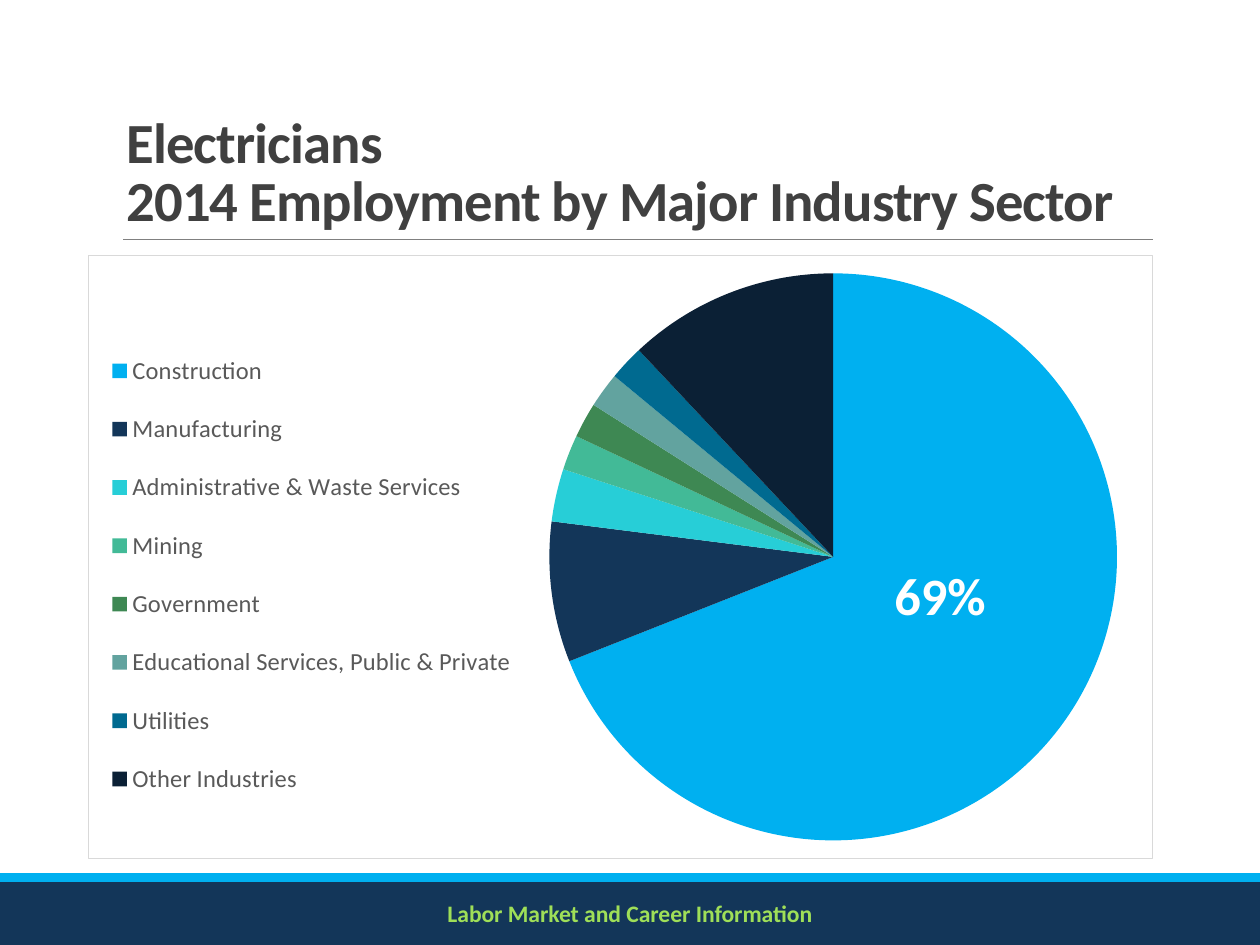
"""Build the slide on electricians' employment by major industry sector."""
from lxml.etree import SubElement
from pptx import Presentation
from pptx.chart.data import CategoryChartData
from pptx.dml.color import RGBColor
from pptx.enum.chart import XL_CHART_TYPE, XL_LEGEND_POSITION
from pptx.enum.shapes import MSO_CONNECTOR, MSO_SHAPE
from pptx.enum.text import MSO_ANCHOR, MSO_AUTO_SIZE, PP_ALIGN
from pptx.oxml import parse_xml
from pptx.oxml.ns import nsdecls, qn
from pptx.util import Pt

COLORS = {
    "navy": "133659", "sky": "00B0F0", "rule": "808080", "lime": "9FDF58",
    "title": "404040", "legend": "595959", "border": "D9D9D9",
    "white": "FFFFFF", "black": "000000",
}
SECTORS = [
    ("Construction", 69, "00B0F0"),
    ("Manufacturing", 8, "133659"),
    ("Administrative & Waste Services", 3, "27CED7"),
    ("Mining", 2, "42BA97"),
    ("Government", 2, "3E8853"),
    ("Educational Services, Public & Private", 2, "62A39F"),
    ("Utilities", 2, "006A90"),
    ("Other Industries", 12, "0B2035"),
]


def style(font, size, color, bold=False):
    """Set the typeface, size, colour and weight of a font."""
    font.name = "Calibri"
    font.size = Pt(size)
    font.bold = bold
    font.color.rgb = RGBColor.from_string(COLORS[color])


def set_layout(parent, position, x, y, w, h, inner=False):
    """Place a chart part by fractions of the chart area."""
    for old in parent.findall(qn("c:layout")):
        parent.remove(old)
    layout = parse_xml(f"<c:layout {nsdecls('c')}/>")
    manual = SubElement(layout, qn("c:manualLayout"))
    if inner:
        SubElement(manual, qn("c:layoutTarget")).set("val", "inner")
    for tag, value in [("xMode", "edge"), ("yMode", "edge"),
                       ("x", x), ("y", y), ("w", w), ("h", h)]:
        SubElement(manual, qn(f"c:{tag}")).set("val", str(value))
    parent.insert(position, layout)


prs = Presentation()
prs.slide_width, prs.slide_height = Pt(720), Pt(540)
s = prs.slides.add_slide(prs.slide_layouts[5])

for top, height, color in [(504, 36, "navy"), (499, 5, "sky")]:
    sp = s.shapes.add_shape(MSO_SHAPE.RECTANGLE, 0, Pt(top), Pt(720), Pt(height))
    sp.shadow.inherit = False
    sp.fill.solid()
    sp.fill.fore_color.rgb = RGBColor.from_string(COLORS[color])
    sp.line.fill.background()

rule = s.shapes.add_connector(MSO_CONNECTOR.STRAIGHT, Pt(70.5), Pt(137), Pt(659), Pt(137))
rule.line.width = Pt(0.5)
rule.line.color.rgb = RGBColor.from_string(COLORS["rule"])
SubElement(rule.element.spPr, qn("a:effectLst"))

title = s.shapes.title
title.left, title.top, title.width, title.height = Pt(65), Pt(22.5), Pt(594), Pt(114.5)
tf = title.text_frame
tf.word_wrap = True
tf.auto_size = MSO_AUTO_SIZE.NONE
tf.vertical_anchor = MSO_ANCHOR.BOTTOM
p = tf.paragraphs[0]
p.alignment = PP_ALIGN.LEFT
p.line_spacing = 0.85
for i, text in enumerate(["Electricians", "2014 Employment by Major Industry Sector"]):
    if i:
        p.add_line_break()
    r = p.add_run()
    r.text = text
    style(r.font, 32.4, "title", True)
    r.font._element.set("spc", "-50")

data = CategoryChartData()
data.categories = [name for name, _, _ in SECTORS]
data.add_series("Series 1", [value for _, value, _ in SECTORS])
chart = s.shapes.add_chart(
    XL_CHART_TYPE.PIE, Pt(50), Pt(145.5), Pt(609), Pt(345.5), data).chart
chart.has_title = False
style(chart.font, 10, "black")
chart.has_legend = True
legend = chart.legend
legend.position = XL_LEGEND_POSITION.LEFT
legend.include_in_layout = False
style(legend.font, 14, "legend")

plot = chart.plots[0]
plot.vary_by_categories = True
for i, (_, _, color) in enumerate(SECTORS):
    fill = plot.series[0].points[i].format.fill
    fill.solid()
    fill.fore_color.rgb = RGBColor.from_string(color)

space = chart.element
set_layout(space.find(".//" + qn("c:plotArea")), 0, 0.43, 0.03, 0.54, 0.94, True)
set_layout(space.find(".//" + qn("c:legend")), 1, 0.01, 0.12, 0.4, 0.82)
space.find(qn("c:chart")).addnext(parse_xml(
    f"<c:spPr {nsdecls('c', 'a')}>"
    f'<a:solidFill><a:srgbClr val="{COLORS["white"]}"/></a:solidFill>'
    f'<a:ln w="{Pt(0.75)}"><a:solidFill><a:srgbClr val="{COLORS["border"]}"/>'
    "</a:solidFill></a:ln></c:spPr>"))

for text, box, size, color, align in [
    ("Labor Market and Career Information", (0, 510, 720, 25), 13.5, "lime", PP_ALIGN.CENTER),
    ("69%", (504, 318, 72, 44), 30, "white", PP_ALIGN.LEFT),
]:
    tf = s.shapes.add_textbox(*map(Pt, box)).text_frame
    tf.word_wrap = True
    p = tf.paragraphs[0]
    p.alignment = align
    r = p.add_run()
    r.text = text
    style(r.font, size, color, True)

prs.save("out.pptx")
